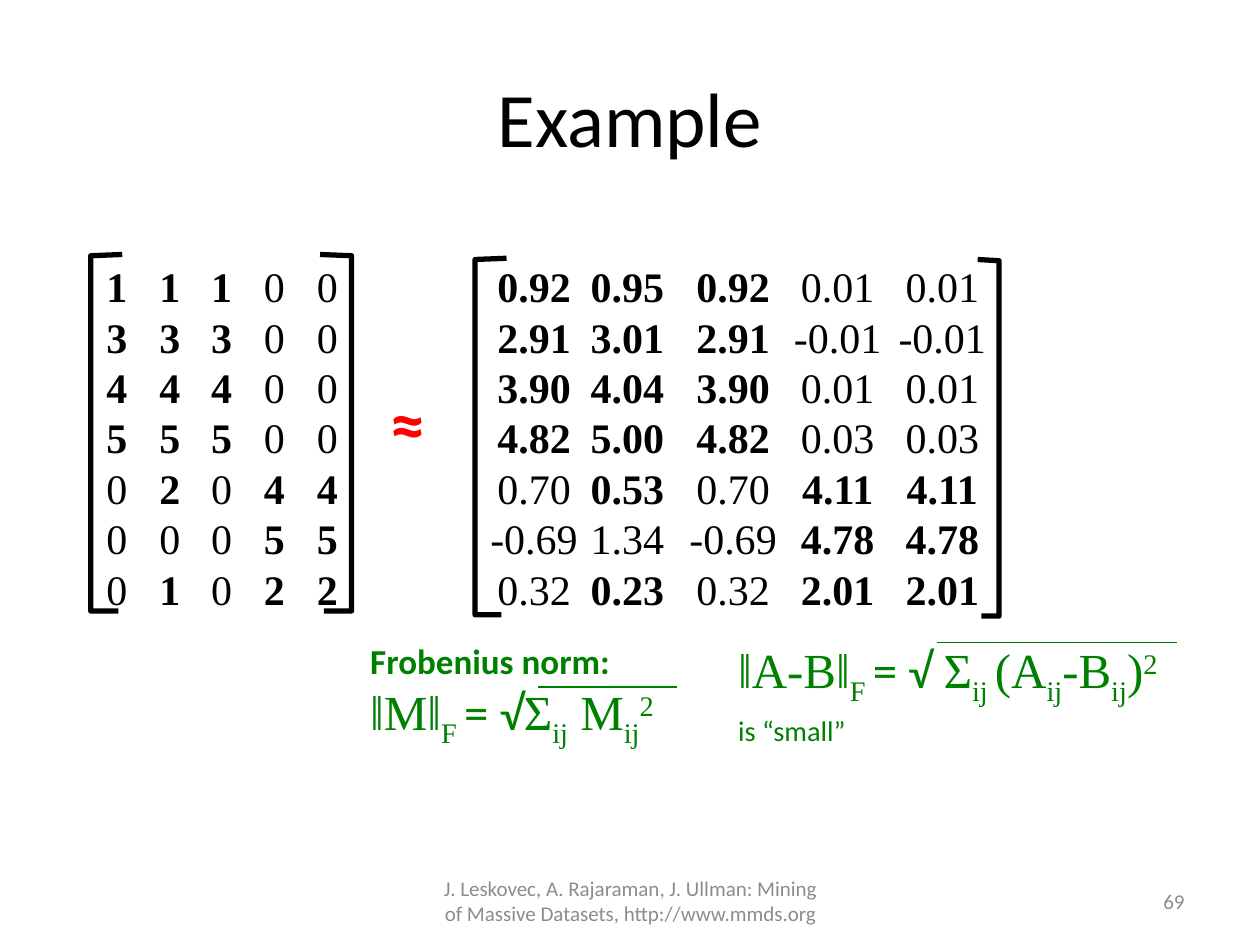
from lxml import etree
from pptx import Presentation
from pptx import util as u
from pptx.dml.color import RGBColor
from pptx.enum import shapes, text
from pptx.oxml import ns

PX = 9144
BLACK = RGBColor(0, 0, 0)
GRAY = RGBColor(0x8C, 0x8C, 0x8C)
RED = RGBColor(0xFF, 0, 0)
GREEN = RGBColor(0, 0x80, 0)
SANS, SERIF = "Calibri", "Times New Roman"
LEFT, MID, RIGHT = text.PP_ALIGN.LEFT, text.PP_ALIGN.CENTER, text.PP_ALIGN.RIGHT

RATES = ["1 1 1 0 0", "3 3 3 0 0", "4 4 4 0 0", "5 5 5 0 0",
         "0 2 0 4 4", "0 0 0 5 5", "0 1 0 2 2"]
GUESS = ["0.92 0.95 0.92 0.01 0.01", "2.91 3.01 2.91 -0.01 -0.01",
         "3.90 4.04 3.90 0.01 0.01", "4.82 5.00 4.82 0.03 0.03",
         "0.70 0.53 0.70 4.11 4.11", "-0.69 1.34 -0.69 4.78 4.78",
         "0.32 0.23 0.32 2.01 2.01"]
NORM = [("ǁMǁ", SERIF, 0), ("F ", SERIF, -25), ("= √", SANS, 0), ("Σ", SERIF, 0),
        ("ij", SERIF, -25), (" M", SERIF, 0), ("ij", SERIF, -25), ("2", SERIF, 30)]
ERROR = [("ǁA-Bǁ", SERIF, 0), ("F ", SERIF, -25), ("= √ ", SANS, 0), ("Σ", SERIF, 0),
         ("ij ", SERIF, -25), ("(A", SERIF, 0), ("ij", SERIF, -25), ("-B", SERIF, 0),
         ("ij", SERIF, -25), (")", SERIF, 0), ("2", SERIF, 30)]


def px(*sizes):
    """Turn px lengths into EMU."""
    return [u.Emu(size * PX) for size in sizes]


def add_run(para, words, size, color, font=SANS, bold=False, base=0):
    """Add one styled run to a paragraph."""
    run = para.add_run()
    run.text = words
    run.font.size, run.font.name, run.font.bold = u.Pt(size), font, bold
    run.font.color.rgb = color
    if base:
        run._r.get_or_add_rPr().set("baseline", str(base * 1000))


def add_box(slide, box, mid=False):
    """Add a wrapped text box and return its frame."""
    frame = slide.shapes.add_textbox(*px(*box)).text_frame
    frame.word_wrap = True
    if mid:
        frame.vertical_anchor = text.MSO_ANCHOR.MIDDLE
    return frame


def add_label(slide, box, words, size, color, align=LEFT, bold=False):
    """Place one line of text in the middle of its box."""
    para = add_box(slide, box, True).paragraphs[0]
    para.alignment = align
    add_run(para, words, size, color, bold=bold)


def add_brace(slide, x, y, tip, foot):
    """Draw a square bracket whose arms reach tip and foot from x."""
    pen = slide.shapes.build_freeform(x + tip, y, scale=PX)
    pen.add_line_segments([(x, y + 1), (x, y + 283), (x + foot, y + 283)], close=False)
    shape = pen.convert_to_shape()
    shape.shadow.inherit = False
    shape.fill.background()
    shape.line.color.rgb = BLACK
    shape.line.width = u.Pt(3)


def add_matrix(slide, box, rows, stops):
    """Set a matrix on centred tab stops, bold where a rating is given."""
    frame = add_box(slide, box)
    for i, (row, rates) in enumerate(zip(rows, RATES)):
        para = frame.paragraphs[0] if i == 0 else frame.add_paragraph()
        tabs = etree.SubElement(para._p.get_or_add_pPr(), ns.qn("a:tabLst"))
        for stop in stops:
            etree.SubElement(tabs, ns.qn("a:tab"), pos=str(stop * PX), algn="ctr")
        for cell, rate in zip(row.split(), rates.split()):
            add_run(para, "\t" + cell, 24, BLACK, SERIF, rate != "0")


def add_math(para, parts):
    """Write a formula run by run."""
    for words, font, base in parts:
        add_run(para, words, 28, GREEN, font, base=base)


def add_norm(slide, x, y):
    """Write the Frobenius norm with its root bar."""
    frame = add_box(slide, (x, y, 263, 91))
    add_run(frame.paragraphs[0], "Frobenius norm:", 20, GREEN, bold=True)
    add_math(frame.add_paragraph(), NORM)
    add_bar(slide, x + 143, y + 42, 110)


def add_error(slide, x, y):
    """Write the error formula with its root bar."""
    frame = add_box(slide, (x, y, 371, 104))
    add_math(frame.paragraphs[0], ERROR)
    add_run(frame.add_paragraph(), "is “small”", 28, GREEN, base=30)
    add_bar(slide, x + 168, y + 7, 190)


def add_bar(slide, x, y, wide):
    """Draw the bar of a root sign."""
    bar = slide.shapes.add_connector(shapes.MSO_CONNECTOR.STRAIGHT, *px(x, y, x + wide, y))
    bar.line.color.rgb = GREEN
    bar.line.width = u.Pt(1)
    etree.SubElement(bar._element.spPr, ns.qn("a:effectLst"))


def add_title(slide, box, words):
    """Fill and place the title."""
    title = slide.shapes.title
    title.left, title.top, title.width, title.height = px(*box)
    title.text_frame.vertical_anchor = text.MSO_ANCHOR.MIDDLE
    para = title.text_frame.paragraphs[0]
    para.alignment = MID
    add_run(para, words, 44, BLACK)


def main():
    """Build and save the slide."""
    deck = Presentation()
    deck.slide_width, deck.slide_height = px(1000, 750)
    slide = deck.slides.add_slide(deck.slide_layouts[5])
    add_title(slide, (50, 30, 900, 125), "Example")
    add_label(slide, (342, 695, 317, 40), "J. Leskovec, A. Rajaraman, J. Ullman: Mining "
              "of Massive Datasets, http://www.mmds.org", 12, GRAY, MID)
    add_label(slide, (717, 695, 233, 40), "69", 12, GRAY, RIGHT)
    for brace in [(72, 202, 25, 22), (279, 202, -25, -22),
                  (377, 205, 25, 21), (793, 206, -17, -14)]:
        add_brace(slide, *brace)
    add_matrix(slide, (68, 202, 217, 293), RATES, (15, 57, 98, 140, 182))
    add_label(slide, (300, 296, 51, 77), "≈", 40, RED, bold=True)
    add_matrix(slide, (376, 202, 475, 293), GUESS, (38, 112, 196, 279, 362))
    add_norm(slide, 284, 503)
    add_error(slide, 576, 503)
    deck.save("out.pptx")


if __name__ == "__main__":
    main()
